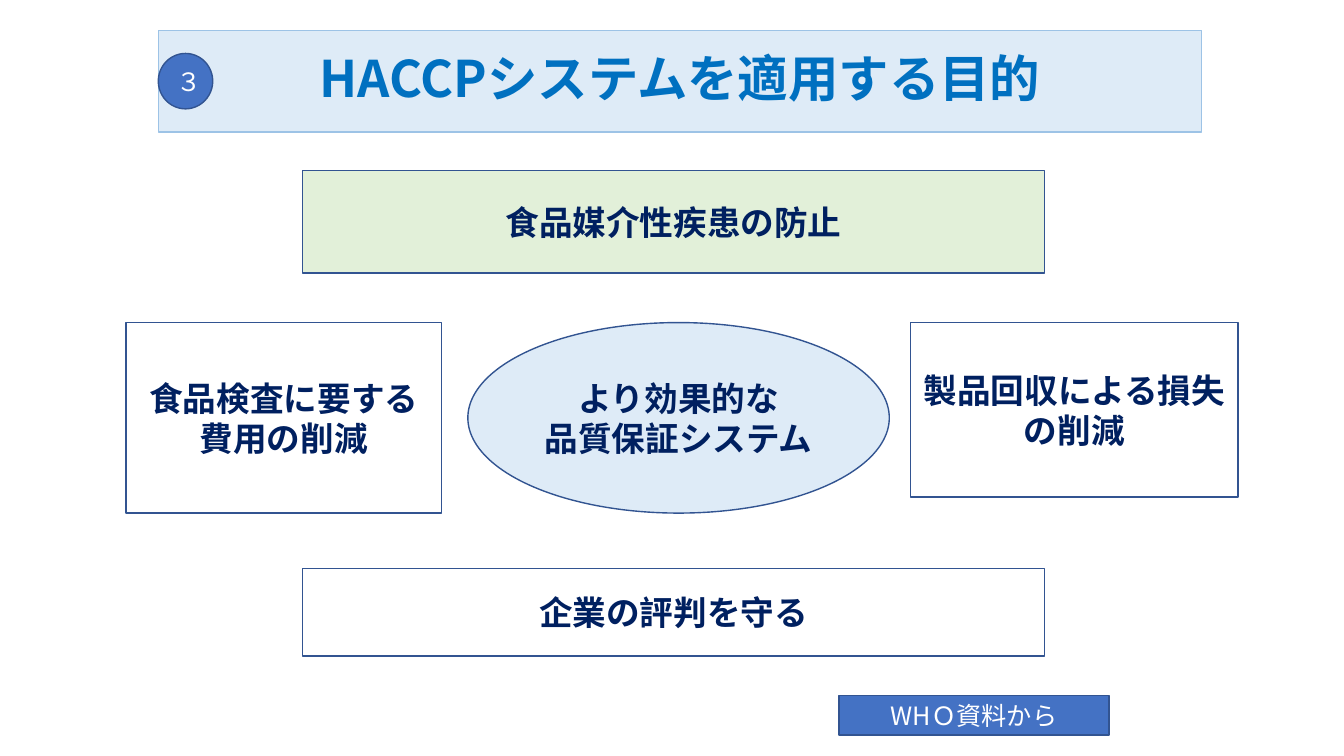
from lxml import etree
from pptx import Presentation
from pptx.dml.color import RGBColor
from pptx.enum.shapes import MSO_SHAPE
from pptx.enum.text import MSO_ANCHOR, PP_ALIGN
from pptx.oxml.ns import qn
from pptx.util import Emu, Pt

RECT, OVAL = MSO_SHAPE.RECTANGLE, MSO_SHAPE.OVAL
MIDDLE, CENTER = MSO_ANCHOR.MIDDLE, PP_ALIGN.CENTER

PX = 9144  # EMU per px, 100 px to the inch
PAGE_SIZE = (1333, 750)
FONT = "Noto Sans CJK JP"
COLORS = {
    "pale_blue": "DEEBF7", "sky": "9DC3E6", "title": "0070C0",
    "navy": "002060", "outline": "325491", "green": "E2F0D9",
    "blue": "4472C4", "white": "FFFFFF",
}

# Text styles: size, bold, text colour, line colour, line width, line spacing
STYLES = {
    "title": (36, True, "title", "sky", 0.75, 0.9),
    "purpose": (24, True, "navy", "outline", 1, 1),
    "label": (18, False, "white", "outline", 1, 1),
}

# Shared edges of the diagram, in px
WIDE_LEFT, WIDE_WIDTH = 300, 736
ROW_TOP, ROW_HEIGHT = 320, 189
TITLE_LEFT = 157

# Boxes: lines of text, style, shape, fill, (left, top, width, height)
BOXES = [
    (["HACCPシステムを適用する目的"], "title", RECT, "pale_blue",
     (TITLE_LEFT, 30, 1035, 101)),
    (["より効果的な", "品質保証システム"], "purpose", OVAL, "pale_blue",
     (464, ROW_TOP, 418, ROW_HEIGHT)),
    (["食品媒介性疾患の防止"], "purpose", RECT, "green",
     (WIDE_LEFT, 169, WIDE_WIDTH, 102)),
    (["食品検査に要する費用の削減"], "purpose", RECT, "white",
     (125, ROW_TOP, 313, ROW_HEIGHT)),
    (["製品回収による損失の削減"], "purpose", RECT, "white",
     (903, ROW_TOP, 325, 173)),
    (["企業の評判を守る"], "purpose", RECT, "white",
     (WIDE_LEFT, 564, WIDE_WIDTH, 87)),
    (["WHＯ資料から"], "label", RECT, "blue", (832, 690, 268, 39)),
    (["３"], "label", OVAL, "blue", (TITLE_LEFT, 53, 54, 55)),
]


def color(name):
    return RGBColor.from_string(COLORS[name])


def write_line(para, text, size, bold, text_color, spacing):
    para.text = text
    para.alignment = CENTER
    para.line_spacing = spacing
    font = para.font
    font.name, font.size, font.bold = FONT, Pt(size), bold
    font.color.rgb = color(text_color)
    # Japanese glyphs take the East Asian typeface
    properties = para._p.pPr.find(qn("a:defRPr"))
    etree.SubElement(properties, qn("a:ea")).set("typeface", FONT)


def add_box(page, lines, style, kind, fill, place):
    size, bold, text_color, line_color, line_width, spacing = STYLES[style]
    box = page.shapes.add_shape(kind, *(Emu(value * PX) for value in place))
    box.shadow.inherit = False
    box.fill.solid()
    box.fill.fore_color.rgb = color(fill)
    box.line.color.rgb = color(line_color)
    box.line.width = Pt(line_width)
    frame = box.text_frame
    frame.word_wrap = True
    frame.vertical_anchor = MIDDLE
    for index, text in enumerate(lines):
        para = frame.add_paragraph() if index else frame.paragraphs[0]
        write_line(para, text, size, bold, text_color, spacing)


def main():
    deck = Presentation()
    deck.slide_width, deck.slide_height = (Emu(side * PX) for side in PAGE_SIZE)
    page = deck.slides.add_slide(deck.slide_layouts[6])
    for box in BOXES:
        add_box(page, *box)
    deck.save("out.pptx")


if __name__ == "__main__":
    main()
